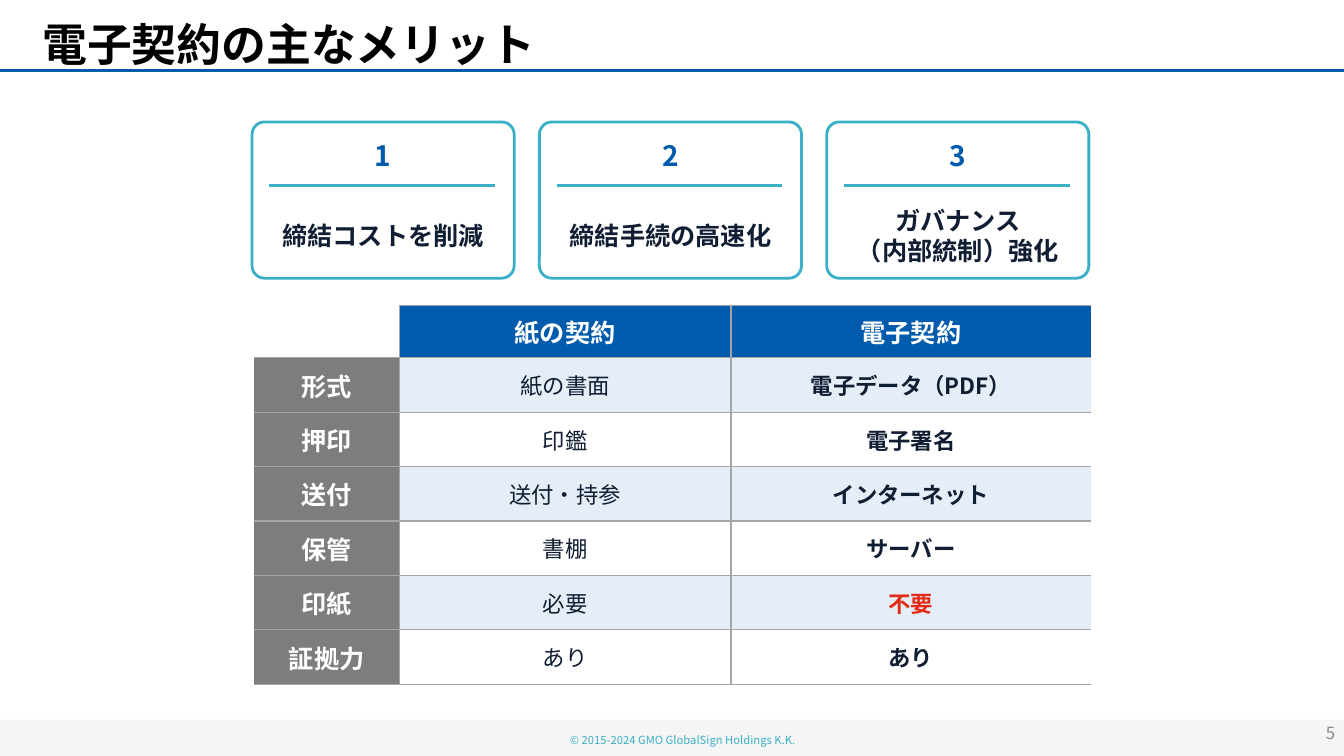
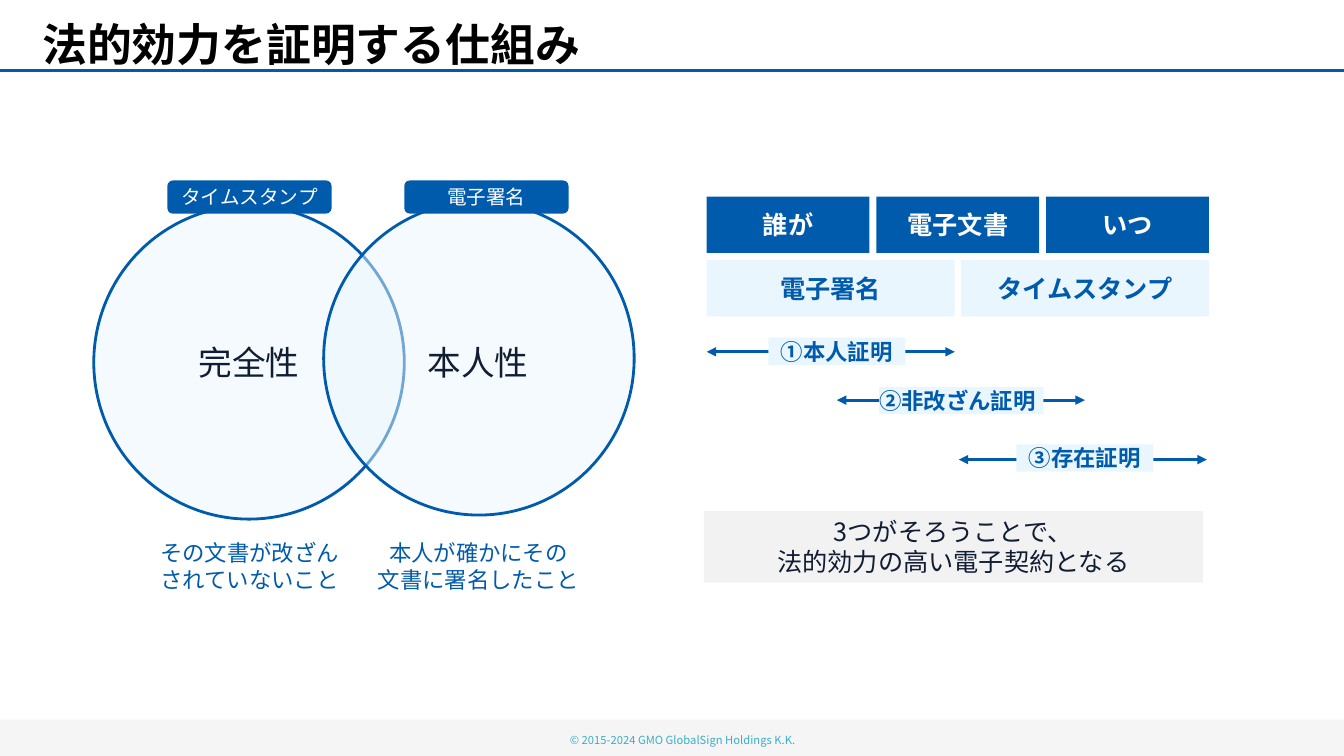
from dataclasses import dataclass

from lxml import etree
from pptx import Presentation
from pptx.dml.color import RGBColor
from pptx.enum import shapes, text
from pptx.oxml import ns
from pptx.util import Inches, Pt


@dataclass(frozen=True)
class Theme:
    font: str = "Noto Sans CJK JP"
    blue: str = "005BAC"
    teal: str = "3AAFC5"
    pale_blue: str = "E9F6FD"
    row_blue: str = "E5EEF7"
    ink: str = "101D32"
    black: str = "000000"
    white: str = "FFFFFF"
    red: str = "E22C18"
    header_gray: str = "7D7D7D"
    border_gray: str = "A5A5A5"
    page_gray: str = "88898D"
    band: str = "F5F5F5"
    note: str = "F2F2F2"
    title_size: float = 32
    large_size: float = 24
    number_size: float = 20
    heading_size: float = 18
    body_size: float = 16
    tag_size: float = 14
    page_size: float = 12
    footer_size: float = 8


THEME = Theme()
LEFT, CENTER, RIGHT = text.PP_ALIGN.LEFT, text.PP_ALIGN.CENTER, text.PP_ALIGN.RIGHT
TOP, MIDDLE = text.MSO_ANCHOR.TOP, text.MSO_ANCHOR.MIDDLE
RECTANGLE = shapes.MSO_SHAPE.RECTANGLE
ROUNDED = shapes.MSO_SHAPE.ROUNDED_RECTANGLE
OVAL = shapes.MSO_SHAPE.OVAL
NO_STYLE_TABLE = "{2D5ABB26-0587-4C30-8999-92F81FD0307C}"


def rgb(color):
    return RGBColor.from_string(color)


def add_element(parent, tag, **attributes):
    return etree.SubElement(parent, ns.qn(tag), attributes)


def write_lines(frame, lines, size, color, bold=False, align=CENTER, spacing=None):
    """Write each line, separated by newlines, as one paragraph."""
    for index, line in enumerate(lines.split("\n")):
        paragraph = frame.add_paragraph() if index else frame.paragraphs[0]
        paragraph.alignment = align
        if spacing:
            paragraph.line_spacing = spacing
        run = paragraph.add_run()
        run.text = line
        font = run.font
        font.size, font.bold, font.name = Pt(size), bold, THEME.font
        font.color.rgb = rgb(color)
        add_element(run._r.get_or_add_rPr(), "a:ea", typeface=THEME.font)


def add_text(slide, box, lines, size, color, anchor=TOP, **style):
    shape = slide.shapes.add_textbox(*map(Inches, box))
    frame = shape.text_frame
    frame.word_wrap = True
    frame.vertical_anchor = anchor
    write_lines(frame, lines, size, color, **style)


def add_panel(slide, kind, box, fill, line=None, radius=None, opacity=None):
    shape = slide.shapes.add_shape(kind, *map(Inches, box))
    shape.shadow.inherit = False
    shape.fill.solid()
    shape.fill.fore_color.rgb = rgb(fill)
    if opacity:
        color = shape.fill._xPr.find(".//" + ns.qn("a:srgbClr"))
        add_element(color, "a:alpha", val=str(opacity * 1000))
    if line:
        shape.line.color.rgb = rgb(line)
        shape.line.width = Pt(2)
    else:
        shape.line.fill.background()
    if radius:
        shape.adjustments[0] = radius
    return shape


def add_label(slide, box, label, size, color, fill, kind=RECTANGLE, radius=None,
              anchor=MIDDLE, inset=True, **style):
    shape = add_panel(slide, kind, box, fill, radius=radius)
    frame = shape.text_frame
    frame.word_wrap = True
    frame.vertical_anchor = anchor
    if not inset:
        frame.margin_left = frame.margin_right = 0
        frame.margin_top = frame.margin_bottom = 0
    write_lines(frame, label, size, color, **style)


def add_horizontal(slide, left, right, top, color, arrows=False):
    connector = slide.shapes.add_connector(
        shapes.MSO_CONNECTOR.STRAIGHT,
        Inches(left), Inches(top), Inches(right), Inches(top))
    connector.line.color.rgb = rgb(color)
    connector.line.width = Pt(2.25)
    if arrows:
        line = connector.line._get_or_add_ln()
        add_element(line, "a:headEnd", type="triangle")
        add_element(line, "a:tailEnd", type="triangle")
    add_element(connector._element.spPr, "a:effectLst")


def add_base_slide(presentation, title, page=None):
    slide = presentation.slides.add_slide(presentation.slide_layouts[6])
    add_panel(slide, RECTANGLE, (0, 7.14, 13.33, 0.36), THEME.band)
    add_horizontal(slide, 0, 13.33, 0.7, THEME.blue)
    add_text(slide, (5.34, 7.2, 2.65, 0.26), "© 2015-2024 GMO GlobalSign Holdings K.K.",
             THEME.footer_size, THEME.teal, align=RIGHT, spacing=1.2)
    if page:
        add_text(slide, (12.74, 7.12, 0.6, 0.4), page, THEME.page_size,
                 THEME.page_gray, align=RIGHT)
    add_text(slide, (0.32, 0.09, 11.21, 0.68), title, THEME.title_size,
             THEME.black, anchor=MIDDLE, bold=True, align=LEFT)
    return slide


def add_merit_card(slide, left, number, merit):
    width = 2.6
    add_panel(slide, ROUNDED, (left, 1.21, width, 1.55), THEME.white, THEME.teal, 0.08)
    add_text(slide, (left, 1.32, width, 0.44), number, THEME.number_size,
             THEME.blue, anchor=MIDDLE, bold=True)
    add_horizontal(slide, left + 0.17, left + 2.41, 1.84, THEME.teal)
    add_text(slide, (left, 1.98, width, 0.71), merit, THEME.heading_size,
             THEME.ink, anchor=MIDDLE, bold=True)


def set_borders(cell, visible):
    """Draw the visible sides, out of L, R, T and B; hide the others."""
    properties = cell._tc.get_or_add_tcPr()
    for side in "LRTB":
        line = add_element(properties, "a:ln" + side, w=str(Pt(1)))
        if side in visible:
            fill = add_element(line, "a:solidFill")
            add_element(fill, "a:srgbClr", val=THEME.border_gray)
        else:
            add_element(line, "a:noFill")


def cell_style(row, column, value):
    """Return fill, text size, text colour and weight."""
    if row == 0:
        fill = THEME.blue if column else THEME.white
        return fill, THEME.heading_size, THEME.white, True
    if column == 0:
        return THEME.header_gray, THEME.heading_size, THEME.white, True
    fill = THEME.row_blue if row % 2 else THEME.white
    color = THEME.red if value == "不要" else THEME.ink
    return fill, THEME.body_size, color, column == 2


def add_comparison_table(slide, rows):
    frame = slide.shapes.add_table(
        len(rows), 3, Inches(2.52), Inches(3.03), Inches(8.3), Inches(3.76))
    table = frame.table
    table.first_row = table.horz_banding = False
    table._tbl.tblPr.find(ns.qn("a:tableStyleId")).text = NO_STYLE_TABLE
    for column, width in zip(table.columns, (1.44, 3.29, 3.57)):
        column.width = Inches(width)
    for row_index, values in enumerate(rows):
        table.rows[row_index].height = Inches(0.54 if row_index else 0.52)
        for column_index, value in enumerate(values):
            cell = table.cell(row_index, column_index)
            sides = ("RTB", "LRTB", "LTB")[column_index]
            set_borders(cell, sides if value else "RB")
            fill, size, color, bold = cell_style(row_index, column_index, value)
            cell.fill.solid()
            cell.fill.fore_color.rgb = rgb(fill)
            cell.vertical_anchor = MIDDLE
            cell.margin_left = cell.margin_right = Inches(0.07)
            cell.margin_top = cell.margin_bottom = Inches(0.04)
            if value:
                write_lines(cell.text_frame, value, size, color, bold)


def build_merits(presentation):
    slide = add_base_slide(presentation, "電子契約の主なメリット", "5")
    merits = ("締結コストを削減", "締結手続の高速化", "ガバナンス\n（内部統制）強化")
    for index, merit in enumerate(merits):
        add_merit_card(slide, 2.5 + 2.85 * index, str(index + 1), merit)
    add_comparison_table(slide, (
        ("", "紙の契約", "電子契約"),
        ("形式", "紙の書面", "電子データ（PDF）"),
        ("押印", "印鑑", "電子署名"),
        ("送付", "送付・持参", "インターネット"),
        ("保管", "書棚", "サーバー"),
        ("印紙", "必要", "不要"),
        ("証拠力", "あり", "あり"),
    ))


def add_venn(slide):
    for left, top in ((0.93, 2.04), (3.21, 2)):
        add_panel(slide, OVAL, (left, top, 3.08, 3.11), THEME.pale_blue,
                  THEME.blue, opacity=49)
    circles = (
        (1.66, "タイムスタンプ", 1.77, "完全性", 1.27, "その文書が改ざん\nされていないこと"),
        (4.01, "電子署名", 4.04, "本人性", 3.54, "本人が確かにその\n文書に署名したこと"),
    )
    for tag_left, tag, name_left, name, caption_left, caption in circles:
        add_label(slide, (tag_left, 1.79, 1.63, 0.33), tag, THEME.tag_size,
                  THEME.white, THEME.blue, ROUNDED, 0.17)
        add_text(slide, (name_left, 3.34, 1.4, 0.5), name, THEME.large_size, THEME.ink)
        add_text(slide, (caption_left, 5.3, 2.41, 0.64), caption,
                 THEME.body_size, THEME.blue)


def add_label_row(slide, top, labels, gap, color, fill):
    """Share one row's full width equally among the labels."""
    left, total = 7.01, 4.98
    width = (total - gap * (len(labels) - 1)) / len(labels)
    for index, label in enumerate(labels):
        add_label(slide, (left + index * (width + gap), top, width, 0.56), label,
                  THEME.heading_size, color, fill, bold=True)


def add_proofs(slide):
    proofs = (
        (7.01, 3.49, "①本人証明", 7.62, 3.35, 1.36, CENTER),
        (8.3, 3.97, "②非改ざん証明", 8.72, 3.84, 1.63, LEFT),
        (9.51, 4.56, "③存在証明", 10.08, 4.41, 1.36, CENTER),
    )
    for arrow_left, arrow_top, proof, left, top, width, align in proofs:
        add_horizontal(slide, arrow_left, arrow_left + 2.46, arrow_top,
                       THEME.blue, arrows=True)
        add_label(slide, (left, top, width, 0.27), proof, THEME.body_size, THEME.blue,
                  THEME.pale_blue, anchor=TOP, inset=False, bold=True, align=align)


def build_legal_effect(presentation):
    slide = add_base_slide(presentation, "法的効力を証明する仕組み")
    add_venn(slide)
    add_label_row(slide, 1.95, ("誰が", "電子文書", "いつ"), 0.07,
                  THEME.white, THEME.blue)
    add_label_row(slide, 2.58, ("電子署名", "タイムスタンプ"), 0.06,
                  THEME.blue, THEME.pale_blue)
    add_proofs(slide)
    add_label(slide, (6.98, 5.07, 4.95, 0.71),
              "3つがそろうことで、\n法的効力の高い電子契約となる",
              THEME.heading_size, THEME.ink, THEME.note, anchor=TOP)


def main():
    presentation = Presentation()
    presentation.slide_width = Inches(13.33)
    presentation.slide_height = Inches(7.5)
    build_merits(presentation)
    build_legal_effect(presentation)
    presentation.save("out.pptx")


if __name__ == "__main__":
    main()
